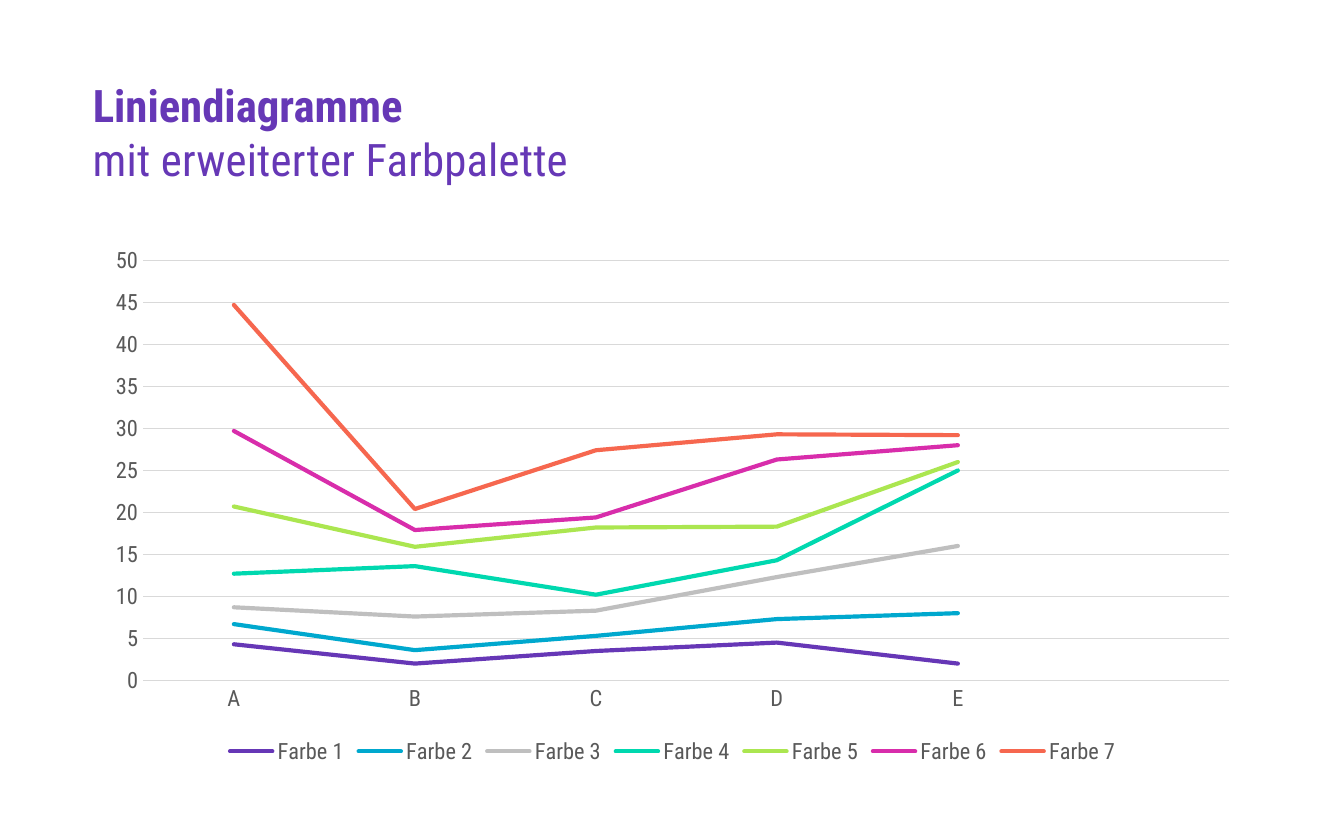
import pptx
import pptx.chart.data
import pptx.dml.color
import pptx.enum.chart
import pptx.enum.text
import pptx.util
from pptx.util import Inches, Pt

COLORS = {
    "heading": "6638B6",
    "label": "595959",
    "grid": "D9D9D9",
    "Farbe 1": "6637B6",
    "Farbe 2": "00A8CE",
    "Farbe 3": "BFBFBF",
    "Farbe 4": "00D8AF",
    "Farbe 5": "ABE650",
    "Farbe 6": "D82DAB",
    "Farbe 7": "F6674F",
}
FONT = "Roboto Condensed"
# The sixth category has no label and no values; it leaves room on the right.
CATEGORIES = ["A", "B", "C", "D", "E", ""]
SERIES = {
    "Farbe 1": [4.3, 2, 3.5, 4.5, 2, None],
    "Farbe 2": [2.4, 1.6, 1.8, 2.8, 6, None],
    "Farbe 3": [2, 4, 3, 5, 8, None],
    "Farbe 4": [4, 6, 1.9, 2, 9, None],
    "Farbe 5": [8, 2.3, 8, 4, 1, None],
    "Farbe 6": [9, 2, 1.2, 8, 2, None],
    "Farbe 7": [15, 2.5, 8, 3, 1.2, None],
}


def color(name):
    return pptx.dml.color.RGBColor.from_string(COLORS[name])


def style_font(font, size, color_name, bold=False):
    font.name = FONT
    font.size = Pt(size)
    font.bold = bold
    font.color.rgb = color(color_name)


def style_line(line, color_name, width):
    line.color.rgb = color(color_name)
    line.width = Pt(width)


def set_heading(shape, text, box, line_spacing, bold=False):
    shape.left, shape.top, shape.width, shape.height = box
    frame = shape.text_frame
    frame.text = text
    frame.word_wrap = True
    frame.auto_size = pptx.enum.text.MSO_AUTO_SIZE.NONE
    frame.vertical_anchor = pptx.enum.text.MSO_ANCHOR.TOP
    frame.margin_left = frame.margin_right = 0
    frame.margin_top = frame.margin_bottom = 0
    paragraph = frame.paragraphs[0]
    paragraph.alignment = pptx.enum.text.PP_ALIGN.LEFT
    paragraph.line_spacing = line_spacing
    style_font(paragraph.runs[0].font, 24, "heading", bold)
    return paragraph


def add_headings(slide, left, top, width):
    set_heading(slide.shapes.title, "Liniendiagramme",
                (left, top, width, Inches(0.32)), 0.9, bold=True)
    box = (left, top + Inches(0.32), width, Inches(0.36))
    subtitle = set_heading(slide.shapes.add_textbox(*box),
                           "mit erweiterter Farbpalette", box, 1.1)
    subtitle.runs[0].font._element.set("spc", "10")


def add_line_chart(slide, left, top, width, height):
    data = pptx.chart.data.CategoryChartData()
    data.categories = CATEGORIES
    for name, values in SERIES.items():
        data.add_series(name, values)
    chart = slide.shapes.add_chart(
        pptx.enum.chart.XL_CHART_TYPE.LINE_STACKED,
        left, top, width, height, data).chart
    chart.has_title = False
    style_font(chart.font, 12, "label")

    chart.has_legend = True
    chart.legend.position = pptx.enum.chart.XL_LEGEND_POSITION.BOTTOM
    chart.legend.include_in_layout = False
    style_font(chart.legend.font, 12, "label")

    for axis in (chart.category_axis, chart.value_axis):
        axis.major_tick_mark = pptx.enum.chart.XL_TICK_MARK.NONE
        axis.minor_tick_mark = pptx.enum.chart.XL_TICK_MARK.NONE
        style_font(axis.tick_labels.font, 12, "label")
    style_line(chart.category_axis.format.line, "grid", 0.75)
    value_axis = chart.value_axis
    value_axis.minimum_scale, value_axis.maximum_scale = 0, 50
    value_axis.major_unit = 5
    value_axis.format.line.fill.background()
    style_line(value_axis.major_gridlines.format.line, "grid", 0.75)

    plot = chart.plots[0]
    plot.vary_by_categories = False
    for series in plot.series:
        series.smooth = False
        series.marker.style = pptx.enum.chart.XL_MARKER_STYLE.NONE
        style_line(series.format.line, series.name, 2.25)
        series.format.line._get_or_add_ln().set("cap", "rnd")


def main():
    presentation = pptx.Presentation()
    presentation.slide_width = Inches(10)
    presentation.slide_height = Inches(6.25)
    slide = presentation.slides.add_slide(presentation.slide_layouts[5])
    left, width = Inches(0.69), Inches(8.63)
    add_headings(slide, left, Inches(0.62), width)
    add_line_chart(slide, left, Inches(1.76), width, Inches(3.97))
    presentation.save("out.pptx")


if __name__ == "__main__":
    main()
